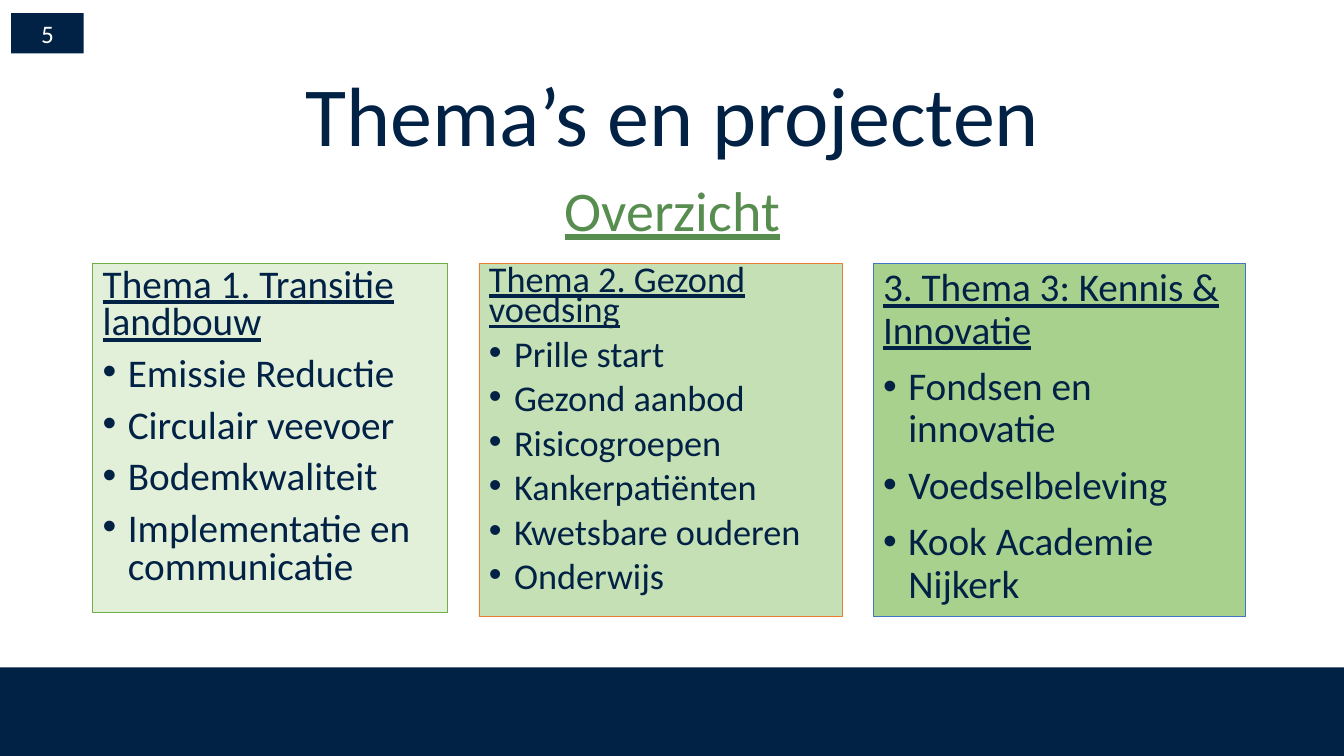
from lxml.etree import SubElement
from pptx import Presentation
from pptx.dml.color import RGBColor
from pptx.enum.shapes import MSO_SHAPE
from pptx.enum.text import MSO_ANCHOR, PP_ALIGN
from pptx.oxml.ns import qn
from pptx.util import Inches, Pt

WIDTH, HEIGHT = 13.33, 7.5
NAVY, GREEN, WHITE = "012145", "588D50", "FFFFFF"
MARGIN, HEAD_WIDTH = 0.92, 11.5
BAND_TOP, THEME_TOP = 6.62, 2.61
INDENT = 0.25

PAGE_NUMBER = "5"
HEADINGS = [
    dict(text="Overzicht", top=1.82, height=0.66, spacing=0.8,
         font=dict(size=Pt(40), underline=True), color=GREEN),
    dict(text="Thema’s en projecten", top=0.68, height=1.02, spacing=0.9,
         font=dict(size=Pt(60)), color=NAVY),
]
THEMES = [
    dict(title="Thema 1. Transitie landbouw",
         projects=["Emissie Reductie", "Circulair veevoer", "Bodemkwaliteit",
                   "Implementatie en communicatie"],
         left=MARGIN, width=3.52, height=3.47, fill="E2F0D9", line="70AD47",
         size=28, spacing=0.8),
    dict(title="Thema 2. Gezond voedsing",
         projects=["Prille start", "Gezond aanbod", "Risicogroepen",
                   "Kankerpatiënten", "Kwetsbare ouderen", "Onderwijs"],
         left=4.75, width=3.61, height=3.51, fill="C5E0B4", line="ED7D31",
         size=25.9, spacing=0.7),
    dict(title="3. Thema 3: Kennis & Innovatie",
         projects=["Fondsen en innovatie", "Voedselbeleving",
                   "Kook Academie Nijkerk"],
         left=8.66, width=3.69, height=3.51, fill="A9D18E", line="4472C4",
         size=28, spacing=0.9),
]


def rgb(value):
    return RGBColor.from_string(value)


def add_rect(left, top, width, height, fill, line=None):
    sp = slide.shapes.add_shape(MSO_SHAPE.RECTANGLE, *map(Inches, (left, top, width, height)))
    sp.shadow.inherit = False
    sp.fill.solid()
    sp.fill.fore_color.rgb = rgb(fill)
    if line:
        sp.line.color.rgb = rgb(line)
        sp.line.width = Pt(0.5)
    else:
        sp.line.fill.background()
    return sp


def add_bullet(p):
    pPr = p._p.get_or_add_pPr()
    pPr.set("marL", str(Inches(INDENT)))
    pPr.set("indent", str(-Inches(INDENT)))
    SubElement(pPr, qn("a:buFont")).set("typeface", "Arial")
    SubElement(pPr, qn("a:buChar")).set("char", "•")


def write(p, text, color, font, **layout):
    """Put one run in a paragraph; layout holds paragraph attributes."""
    for name, value in layout.items():
        setattr(p, name, value)
    r = p.add_run()
    r.text = text
    for name, value in dict(name="Calibri", **font).items():
        setattr(r.font, name, value)
    r.font.color.rgb = rgb(color)


def add_heading(heading):
    box = slide.shapes.add_textbox(*map(Inches, (
        MARGIN, heading["top"], HEAD_WIDTH, heading["height"])))
    tf = box.text_frame
    tf.word_wrap = True
    write(tf.paragraphs[0], heading["text"], heading["color"], heading["font"],
          alignment=PP_ALIGN.CENTER, line_spacing=heading["spacing"])


def add_theme(theme):
    sp = add_rect(theme["left"], THEME_TOP, theme["width"], theme["height"],
                  theme["fill"], theme["line"])
    tf = sp.text_frame
    tf.word_wrap = True
    tf.vertical_anchor = MSO_ANCHOR.TOP
    layout = dict(alignment=PP_ALIGN.LEFT, line_spacing=theme["spacing"])
    size = Pt(theme["size"])
    write(tf.paragraphs[0], theme["title"], NAVY, dict(size=size, underline=True), **layout)
    for project in theme["projects"]:
        p = tf.add_paragraph()
        add_bullet(p)
        write(p, project, NAVY, dict(size=size), space_before=Pt(10), **layout)


prs = Presentation()
prs.slide_width, prs.slide_height = Inches(WIDTH), Inches(HEIGHT)
slide = prs.slides.add_slide(prs.slide_layouts[6])

add_rect(0, BAND_TOP, WIDTH, HEIGHT - BAND_TOP, NAVY)
for heading in HEADINGS:
    add_heading(heading)
for theme in THEMES:
    add_theme(theme)

badge = add_rect(0.11, 0.13, 0.72, 0.4, NAVY)
badge.text_frame.vertical_anchor = MSO_ANCHOR.MIDDLE
write(badge.text_frame.paragraphs[0], PAGE_NUMBER, WHITE, dict(size=Pt(18)),
      alignment=PP_ALIGN.CENTER)

prs.save("out.pptx")
